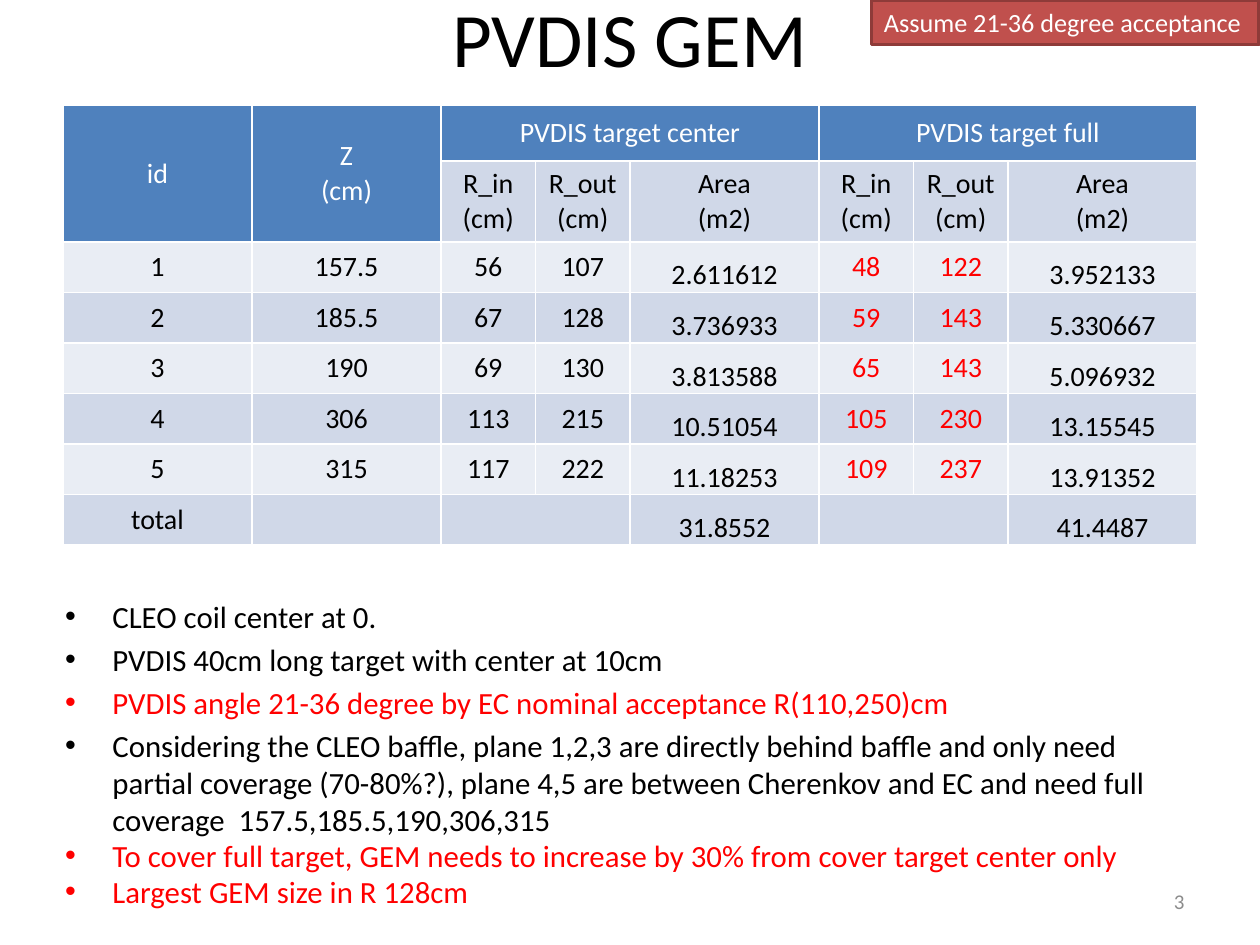
from pptx import Presentation
from pptx.dml.color import RGBColor
from pptx.enum.shapes import MSO_SHAPE
from pptx.enum.text import MSO_ANCHOR, MSO_AUTO_SIZE, PP_ALIGN
from pptx.util import Pt

RECTANGLE = MSO_SHAPE.RECTANGLE
TOP, MIDDLE, BOTTOM = MSO_ANCHOR.TOP, MSO_ANCHOR.MIDDLE, MSO_ANCHOR.BOTTOM
LEFT, CENTER, RIGHT = PP_ALIGN.LEFT, PP_ALIGN.CENTER, PP_ALIGN.RIGHT
NO_FIT = MSO_AUTO_SIZE.NONE

FONT = "Calibri"
BLACK, WHITE, RED, GRAY = "000000", "FFFFFF", "FF0000", "8C8C8C"
HEADER_FILL, DARK_BAND, LIGHT_BAND = "4F81BD", "D0D8E8", "E9EDF4"
BADGE_FILL, BADGE_LINE = "C0504D", "8E3B39"

COLUMN_WIDTHS = [108, 108, 54, 54, 108, 54, 54, 108]
ROW_HEIGHTS = [31.9, 46.3] + [28.9] * 6
AREA_COLUMNS = (4, 7)
FULL_RADIUS_COLUMNS = (5, 6)
HEADER_ROWS = 2
RADII_AND_AREA = ["R_in (cm)", "R_out(cm)", "Area\n(m2)"]
TABLE_ROWS = [
    ["id", "Z\n(cm)", "PVDIS target center", "", "", "PVDIS target full", "", ""],
    ["", ""] + RADII_AND_AREA * 2,
    ["1", "157.5", "56", "107", "2.611612", "48", "122", "3.952133"],
    ["2", "185.5", "67", "128", "3.736933", "59", "143", "5.330667"],
    ["3", "190", "69", "130", "3.813588", "65", "143", "5.096932"],
    ["4", "306", "113", "215", "10.51054", "105", "230", "13.15545"],
    ["5", "315", "117", "222", "11.18253", "109", "237", "13.91352"],
    ["total", "", "", "", "31.8552", "", "", "41.4487"],
]
# Corners of the merged cells: first row, first column, last row, last column
MERGES = [(0, 0, 1, 0), (0, 1, 1, 1), (0, 2, 0, 4), (0, 5, 0, 7),
          (7, 2, 7, 3), (7, 5, 7, 6)]

# Text, colour, line spacing
NOTES = [
    ("CLEO coil center at 0.", BLACK, 0.8),
    ("PVDIS 40cm long target with center at 10cm", BLACK, 1.0),
    ("PVDIS angle 21-36 degree by EC nominal acceptance R(110,250)cm", RED, 1.0),
    ("Considering the CLEO baffle, plane 1,2,3 are directly behind baffle and "
     "only need partial coverage (70-80%?), plane 4,5 are between Cherenkov and "
     "EC and need full coverage  157.5,185.5,190,306,315", BLACK, 1.0),
    ("To cover full target, GEM needs to increase by 30% from cover target "
     "center only", RED, 0.8),
    ("Largest GEM size in R 128cm", RED, 0.8),
]


def color(value):
    return RGBColor.from_string(value)


def style_font(font, size, ink):
    font.name = FONT
    font.size = Pt(size)
    font.bold = False
    font.color.rgb = color(ink)


def write(para, text, size, ink, align=LEFT):
    para.alignment = align
    span = para.add_run()
    span.text = text
    style_font(span.font, size, ink)


def place(shape, box):
    shape.left, shape.top, shape.width, shape.height = map(Pt, box)


def add_title(page, box):
    title = page.shapes.title
    place(title, box)
    frame = title.text_frame
    frame.auto_size = NO_FIT
    frame.vertical_anchor = MIDDLE
    write(frame.paragraphs[0], "PVDIS GEM", 44, BLACK, CENTER)


def fill_cell(cell, text, row, column):
    is_header = row == 0 or (row < HEADER_ROWS and column < 2)
    band = LIGHT_BAND if row in (2, 4, 6) else DARK_BAND
    cell.fill.solid()
    cell.fill.fore_color.rgb = color(HEADER_FILL if is_header else band)
    cell.vertical_anchor = MIDDLE
    ink = WHITE if is_header else BLACK
    if row >= HEADER_ROWS:
        if column in AREA_COLUMNS:
            cell.vertical_anchor = BOTTOM
            cell.margin_left = cell.margin_top = cell.margin_right = Pt(0.75)
            cell.margin_bottom = Pt(0)
        elif column in FULL_RADIUS_COLUMNS:
            ink = RED
    frame = cell.text_frame
    if not text:
        style_font(frame.paragraphs[0].font, 16, ink)
        return
    for index, line in enumerate(text.split("\n")):
        para = frame.add_paragraph() if index else frame.paragraphs[0]
        write(para, line, 16, ink, CENTER)


def add_gem_table(page, box):
    table = page.shapes.add_table(len(ROW_HEIGHTS), len(COLUMN_WIDTHS),
                                  *map(Pt, box)).table
    for column, width in zip(table.columns, COLUMN_WIDTHS):
        column.width = Pt(width)
    for row, height in zip(table.rows, ROW_HEIGHTS):
        row.height = Pt(height)
    for top, left, bottom, right in MERGES:
        table.cell(top, left).merge(table.cell(bottom, right))
    for row, texts in enumerate(TABLE_ROWS):
        for column, text in enumerate(texts):
            fill_cell(table.cell(row, column), text, row, column)


def add_notes_list(page, box):
    body = page.placeholders[1]
    place(body, box)
    frame = body.text_frame
    frame.auto_size = NO_FIT
    for index, (text, ink, spacing) in enumerate(NOTES):
        para = frame.add_paragraph() if index else frame.paragraphs[0]
        para.line_spacing = spacing
        write(para, text, 17.6, ink)


def add_page_number(page, box):
    frame = page.shapes.add_textbox(*map(Pt, box)).text_frame
    frame.word_wrap = True
    frame.vertical_anchor = MIDDLE
    write(frame.paragraphs[0], "3", 12, GRAY, RIGHT)


def add_acceptance_badge(page, box):
    badge = page.shapes.add_shape(RECTANGLE, *map(Pt, box))
    badge.shadow.inherit = False
    badge.fill.solid()
    badge.fill.fore_color.rgb = color(BADGE_FILL)
    badge.line.color.rgb = color(BADGE_LINE)
    badge.line.width = Pt(2)
    frame = badge.text_frame
    frame.word_wrap = False
    frame.vertical_anchor = TOP
    write(frame.paragraphs[0], "Assume 21-36 degree acceptance", 15, WHITE)


def main():
    deck = Presentation()
    deck.slide_width, deck.slide_height = Pt(720), Pt(540)
    page = deck.slides.add_slide(deck.slide_layouts[1])
    add_title(page, (36, -24, 648, 90))
    add_gem_table(page, (36, 60, 648, sum(ROW_HEIGHTS)))
    add_notes_list(page, (30, 342, 648, 186))
    add_page_number(page, (516, 500.5, 168, 28.75))
    add_acceptance_badge(page, (498, 0, 221.4, 25.4))
    deck.save("out.pptx")


if __name__ == "__main__":
    main()
